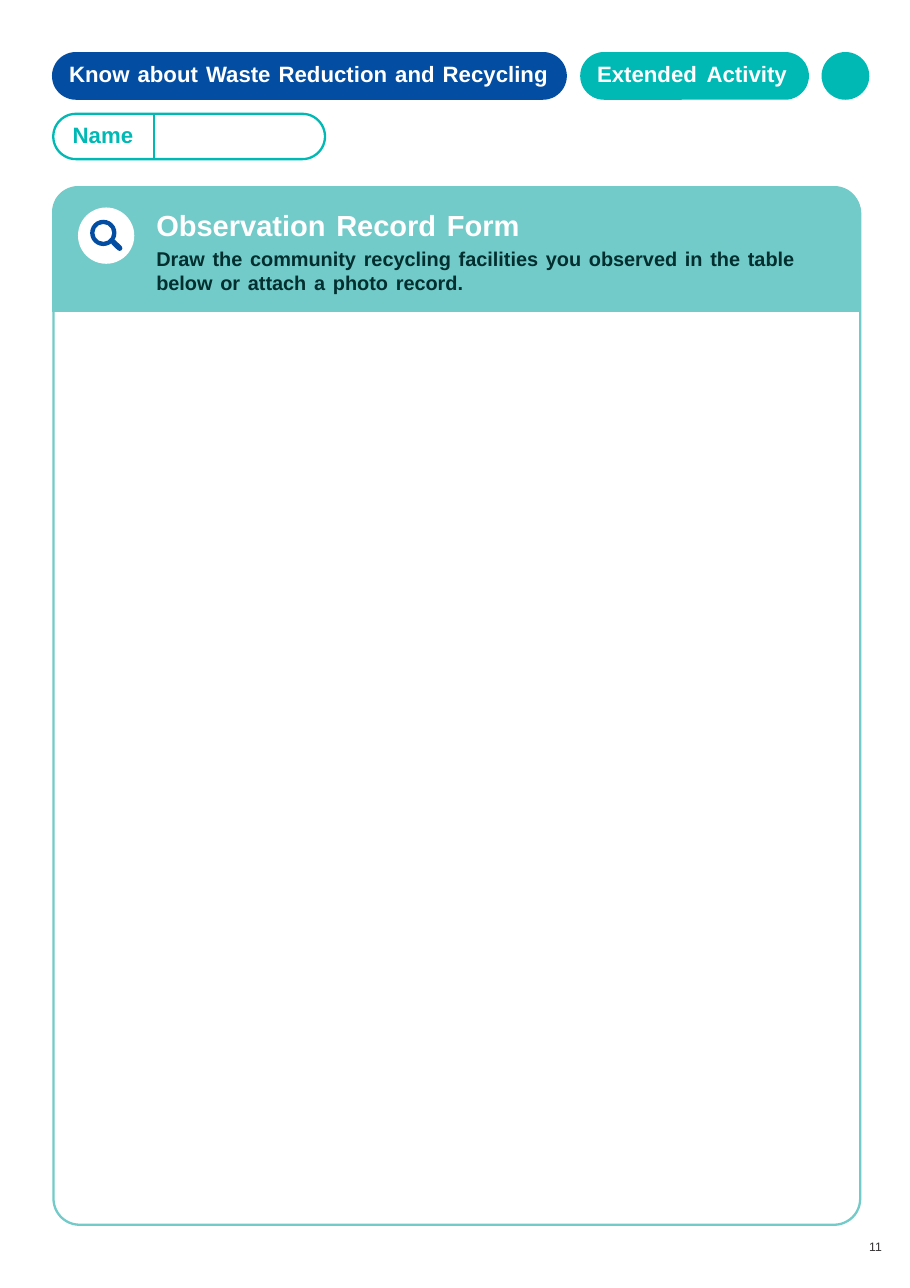
from pptx import Presentation
from pptx import util as u
from pptx.dml.color import RGBColor
from pptx.enum import shapes, text
from pptx.oxml import parse_xml
from pptx.oxml.ns import nsdecls, qn
from lxml import etree

COLORS = {
    "navy": "034EA2", "teal": "00B9B5", "mint": "72CBC9",
    "ink": "002F2F", "gray": "323031", "white": "FFFFFF",
}
PAGE_SIZE = (594.72, 841.68)
KIND = shapes.MSO_SHAPE

HEADER_TOP, HEADER_HEIGHT = 34, 31.2
HEADER_PILLS = [
    (33.95, 336.5, "navy"),
    (379.2, 149.5, "teal"),
    (536.9, 31.2, "teal"),
]
FRAME = (35, 122.8, 527.2, 677.6)
BANNER = (34, 121.6, 528.4, 82.2)
CORNER = 17
BADGE = (51, 135.6, 36.8, 36.8)
LENS = (58.9, 143.6, 17.2, 17.2)
HANDLE = (74.2, 158.3, 78.2, 162.2)
NAME_PILL = (34.8, 74.4, 177.6, 29.6)
NAME_DIVIDER = (100.6, 74.6, 100.6, 104)

LABELS = [
    ((45.2, 39.6, 335, 19), [("Know about Waste Reduction and Recycling", 14.5, "white", True, 1, 1, 1.2)]),
    ((390.2, 39.6, 129, 19), [("Extended Activity", 14.5, "white", True, 1, 1, 2.2)]),
    ((47.5, 79.6, 48, 19), [("Name", 14.5, "teal", True, 1, 1, 0)]),
    ((102.2, 135.3, 426, 60), [
        ("Observation Record Form", 19, "white", True, 0, 1, 1.7),
        ("Draw the community recycling facilities you observed in the table "
         "below or attach a photo record.", 13, "ink", True, 2.5, 1.03, 1.5),
    ]),
    ((568.1, 810, 14, 10), [("11", 8, "gray", False, 0, 1, 0)]),
]


def color(name):
    return RGBColor.from_string(COLORS[name])


def points(values):
    return [u.Pt(value) for value in values]


def add_outline(page, kind, bounds, fill=None, line=None, adjust=()):
    shape = page.shapes.add_shape(kind, *points(bounds))
    shape.shadow.inherit = False
    for index, value in enumerate(adjust):
        shape.adjustments[index] = value
    if fill:
        shape.fill.solid()
        shape.fill.fore_color.rgb = color(fill)
    else:
        shape.fill.background()
    if line:
        shape.line.color.rgb = color(line)
        shape.line.width = u.Pt(1.5)
    else:
        shape.line.fill.background()


def add_line(page, ends, line, width, cap="flat"):
    connector = page.shapes.add_connector(shapes.MSO_CONNECTOR.STRAIGHT, *points(ends))
    connector.line.color.rgb = color(line)
    connector.line.width = u.Pt(width)
    properties = connector._element.spPr
    properties.find(qn("a:ln")).set("cap", cap)
    etree.SubElement(properties, qn("a:effectLst"))


def add_span(para, content, spacing=0):
    span = para.add_run()
    span.text = content
    if spacing:
        span._r.get_or_add_rPr().set("spc", str(round(spacing * 100)))


def add_label(page, bounds, lines):
    box = page.shapes.add_textbox(*points(bounds))
    frame = box.text_frame
    frame.word_wrap = True
    frame.auto_size = text.MSO_AUTO_SIZE.NONE
    frame.margin_left = frame.margin_top = frame.margin_right = frame.margin_bottom = 0
    for index, (content, size, ink, bold, before, leading, gap) in enumerate(lines):
        para = frame.add_paragraph() if index else frame.paragraphs[0]
        para.font.name = "Arial"
        para.font.size = u.Pt(size)
        para.font.bold = bold
        para.font.color.rgb = color(ink)
        para.space_before = u.Pt(before)
        para.line_spacing = leading
        for position, word in enumerate(content.split()):
            if position:
                add_span(para, " ", gap)
            add_span(para, word)


def main():
    deck = Presentation()
    deck.slide_width, deck.slide_height = points(PAGE_SIZE)
    page = deck.slides.add_slide(deck.slide_layouts[6])

    add_outline(page, KIND.ROUNDED_RECTANGLE, FRAME, line="mint", adjust=[CORNER / FRAME[2]])
    for left, width, fill in HEADER_PILLS:
        bounds = (left, HEADER_TOP, width, HEADER_HEIGHT)
        add_outline(page, KIND.ROUNDED_RECTANGLE, bounds, fill=fill, adjust=[0.5])

    add_outline(page, KIND.ROUND_2_SAME_RECTANGLE, BANNER, fill="mint", adjust=[CORNER / BANNER[3], 0])
    add_outline(page, KIND.OVAL, BADGE, fill="white")
    add_outline(page, KIND.DONUT, LENS, fill="navy", adjust=[0.16])
    add_line(page, HANDLE, "navy", 3.6, "rnd")

    add_outline(page, KIND.ROUNDED_RECTANGLE, NAME_PILL, line="teal", adjust=[0.5])
    add_line(page, NAME_DIVIDER, "teal", 1.5)

    for bounds, lines in LABELS:
        add_label(page, bounds, lines)
    deck.save("out.pptx")


if __name__ == "__main__":
    main()
